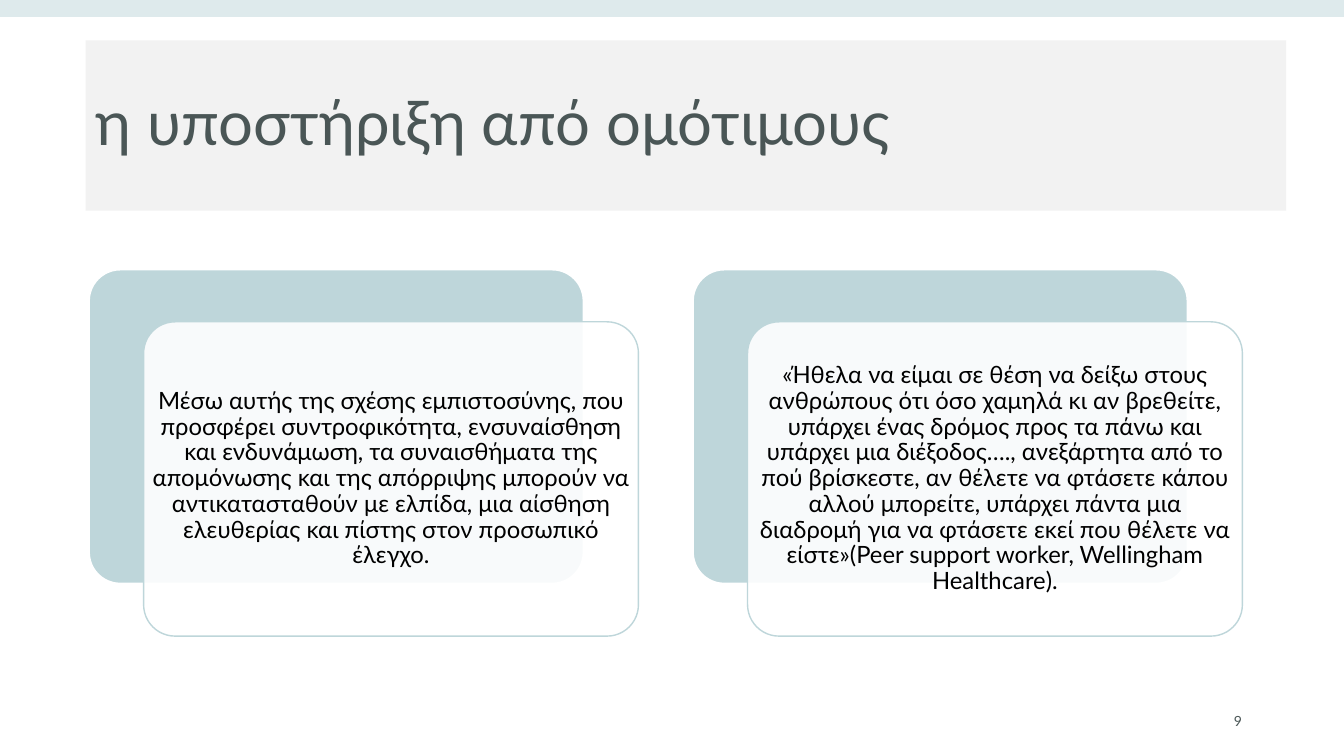
from lxml.etree import SubElement
from pptx import Presentation
from pptx.dml.color import RGBColor
from pptx.enum.shapes import MSO_SHAPE as SHAPE
from pptx.enum.text import MSO_ANCHOR as ANCHOR, MSO_AUTO_SIZE as AUTO, PP_ALIGN as ALIGN
from pptx.oxml.ns import qn
from pptx.util import Cm, Pt

CARD_W, CARD_H = 12.47, 7.92
CARD_LEFT, CARD_TOP, CARD_PITCH = 2.24, 6.79, 15.22
SHIFT_X, SHIFT_Y = 1.38, 1.32

QUOTES = [
    "Μέσω αυτής της σχέσης εμπιστοσύνης, που προσφέρει συντροφικότητα, "
    "ενσυναίσθηση και ενδυνάμωση, τα συναισθήματα της απομόνωσης και της "
    "απόρριψης μπορούν να αντικατασταθούν με ελπίδα, μια αίσθηση ελευθερίας "
    "και πίστης στον προσωπικό έλεγχο.",
    "«Ήθελα να είμαι σε θέση να δείξω στους ανθρώπους ότι όσο χαμηλά κι αν "
    "βρεθείτε, υπάρχει ένας δρόμος προς τα πάνω και υπάρχει μια διέξοδος…., "
    "ανεξάρτητα από το πού βρίσκεστε, αν θέλετε να φτάσετε κάπου αλλού "
    "μπορείτε, υπάρχει πάντα μια διαδρομή για να φτάσετε εκεί που θέλετε να "
    "είστε»(Peer support worker, Wellingham Healthcare).",
]


def paint(fill, color, alpha=None):
    fill.solid()
    fill.fore_color.rgb = RGBColor.from_string(color)
    if alpha is not None:
        clr = fill._xPr.find(qn("a:solidFill"))[0]
        SubElement(clr, qn("a:alpha")).set("val", str(alpha * 1000))


class Deck:
    font = "Lato"
    ink, teal, grey, white, black = "4A5656", "BED6DA", "F2F2F2", "FFFFFF", "000000"

    def __init__(self):
        self.prs = Presentation()
        self.prs.slide_width, self.prs.slide_height = Cm(33.87), Cm(19.05)
        self.s = self.prs.slides.add_slide(self.prs.slide_layouts[5])

    def style(self, p, size, color, align):
        p.alignment = align
        p.font.name, p.font.size = self.font, Pt(size)
        paint(p.font.fill, color)

    def title(self, text, x, y, w, h):
        sp = self.s.shapes.title
        sp.left, sp.top, sp.width, sp.height = Cm(x), Cm(y), Cm(w), Cm(h)
        paint(sp.fill, self.grey)
        tf = sp.text_frame
        tf.text = text
        tf.auto_size, tf.vertical_anchor = AUTO.NONE, ANCHOR.MIDDLE
        p = tf.paragraphs[0]
        p.line_spacing = 0.9
        self.style(p, 44, self.ink, ALIGN.LEFT)

    def box(self, shapes, kind, x, y, w, h, fill, alpha=None, line=None, width=1):
        sp = shapes.add_shape(kind, Cm(x), Cm(y), Cm(w), Cm(h))
        sp.shadow.inherit = False
        paint(sp.fill, fill, alpha)
        if line:
            paint(sp.line.fill, line)
            sp.line.width = Pt(width)
        else:
            sp.line.fill.background()
        return sp

    def text_frame(self, shapes, x, y, w, h):
        tf = shapes.add_textbox(Cm(x), Cm(y), Cm(w), Cm(h)).text_frame
        tf.word_wrap, tf.vertical_anchor = True, ANCHOR.MIDDLE
        return tf

    def card(self, text, x, y):
        shapes = self.s.shapes.add_group_shape().shapes
        front = (x + SHIFT_X, y + SHIFT_Y, CARD_W, CARD_H)
        back = self.box(shapes, SHAPE.ROUNDED_RECTANGLE, x, y, CARD_W, CARD_H,
                        self.teal, line=self.white, width=1.5)
        panel = self.box(shapes, SHAPE.ROUNDED_RECTANGLE, *front,
                         self.white, alpha=90, line=self.teal)
        for sp in (back, panel):
            sp.adjustments[0] = 0.1
        tf = self.text_frame(shapes, *front)
        tf.margin_left = tf.margin_right = tf.margin_top = tf.margin_bottom = Cm(0.18)
        tf.text = text
        p = tf.paragraphs[0]
        p.line_spacing = 0.9
        self.style(p, 17, self.black, ALIGN.CENTER)

    def slide_number(self, number, x, y, w, h):
        p = self.text_frame(self.s.shapes, x, y, w, h).paragraphs[0]
        self.style(p, 10, self.ink, ALIGN.RIGHT)
        fld = SubElement(p._p, qn("a:fld"), type="slidenum",
                         id="{B6F15528-21DE-4FAA-801E-634DDDAF4B2B}")
        rpr = SubElement(fld, qn("a:rPr"), lang="el-GR", sz="1000", spc="150")
        clr = SubElement(SubElement(rpr, qn("a:solidFill")), qn("a:srgbClr"))
        clr.set("val", self.ink)
        SubElement(rpr, qn("a:latin"), typeface=self.font)
        SubElement(fld, qn("a:t")).text = str(number)


def main():
    deck = Deck()
    deck.prs.element.set("firstSlideNum", "9")
    deck.box(deck.s.shapes, SHAPE.RECTANGLE, 0, 0, 33.87, 0.43, deck.teal, alpha=50)
    deck.title("η υποστήριξη από ομότιμους", 2.16, 1.02, 30.25, 4.29)
    for i, quote in enumerate(QUOTES):
        deck.card(quote, CARD_LEFT + i * CARD_PITCH, CARD_TOP)
    deck.slide_number(9, 23.93, 17.65, 7.62, 1.02)
    deck.prs.save("out.pptx")


if __name__ == "__main__":
    main()
